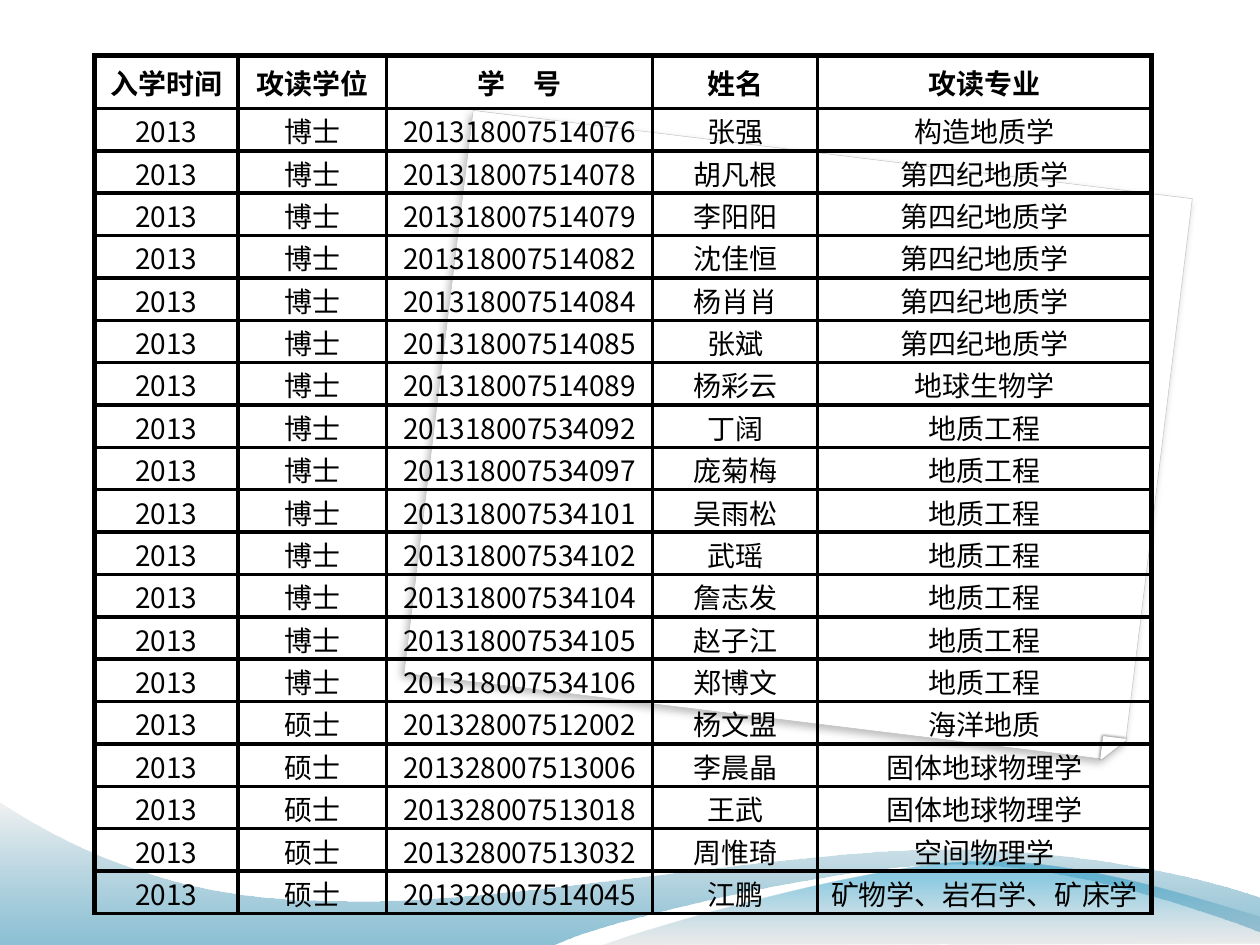
from lxml.etree import SubElement as Sub
from pptx import Presentation
from pptx.dml.color import RGBColor as RGB
from pptx.enum.shapes import MSO_SHAPE as Kind
from pptx.enum.text import MSO_ANCHOR as Anchor, PP_ALIGN as Align
from pptx.oxml.ns import qn
from pptx.util import Inches, Pt

FONT = "Noto Sans CJK SC"
HUES = {
    "ink": "000000", "paper": "FFFFFF", "edge": "C0C0C0", "deep": "0074A1",
    "mist": "E7E7E7", "grey": "BDBDBD", "sea": "008BBF",
}
HEAD = ["入学时间", "攻读学位", "学　号", "姓名", "攻读专业"]
YEAR = "2013"
PEOPLE = [
    ("博士", "201318007514076", "张强", "构造地质学"),
    ("博士", "201318007514078", "胡凡根", "第四纪地质学"),
    ("博士", "201318007514079", "李阳阳", "第四纪地质学"),
    ("博士", "201318007514082", "沈佳恒", "第四纪地质学"),
    ("博士", "201318007514084", "杨肖肖", "第四纪地质学"),
    ("博士", "201318007514085", "张斌", "第四纪地质学"),
    ("博士", "201318007514089", "杨彩云", "地球生物学"),
    ("博士", "201318007534092", "丁阔", "地质工程"),
    ("博士", "201318007534097", "庞菊梅", "地质工程"),
    ("博士", "201318007534101", "吴雨松", "地质工程"),
    ("博士", "201318007534102", "武瑶", "地质工程"),
    ("博士", "201318007534104", "詹志发", "地质工程"),
    ("博士", "201318007534105", "赵子江", "地质工程"),
    ("博士", "201318007534106", "郑博文", "地质工程"),
    ("硕士", "201328007512002", "杨文盟", "海洋地质"),
    ("硕士", "201328007513006", "李晨晶", "固体地球物理学"),
    ("硕士", "201328007513018", "王武", "固体地球物理学"),
    ("硕士", "201328007513032", "周惟琦", "空间物理学"),
    ("硕士", "201328007514045", "江鹏", "矿物学、岩石学、矿床学"),
]
COLS = [1.14, 1.18, 2.11, 1.31, 2.65]
LEFT, TOP, HIGH, HEAD_H = 0.75, 0.44, 6.77, 0.38

SHEETS = [
    (Kind.SNIP_ROUND_RECTANGLE, (3.46, 1.21, 5.75, 4.5), (0, 0.036),
     ("edge", 0.25), (25, 5, 3, 125)),
    (Kind.RIGHT_TRIANGLE, (8.75, 5.86, 0.17, 0.17), (),
     ("paper", 1), (47, 1.6, 0.5, 215)),
]
WAVES = [
    ([(0, 7.5), (4.4, 7.5), (4.76, 7.32, 6.64, 6.86, 7.58, 6.86),
      (8.53, 6.86, 9.58, 7.24, 10, 7.4), (10.01, 7.13),
      (9.83, 7.05, 8.7, 6.73, 7.46, 6.74),
      (6.22, 6.74, 3.82, 7.21, 2.57, 7.15),
      (1.29, 7.14, 0.46, 6.66, -0.01, 6.36)],
     [(0, "deep", 45), (1, "mist", 55)]),
    ([(4.79, 7.5), (5.09, 7.38, 6.82, 6.87, 7.69, 6.84),
      (8.56, 6.8, 9.61, 7.17, 10, 7.28), (10, 7.49)],
     [(0, "grey", 30), (0.8, "sea", 45)]),
]


def hue(name):
    return RGB.from_string(HUES[name])


def fade(clr, part):
    Sub(clr, qn("a:alpha")).set("val", str(part * 1000))


def trace(path, steps=16):
    dots = [path[0]]
    for seg in path[1:]:
        if len(seg) == 2:
            dots.append(seg)
            continue
        a, b, c, d = dots[-1], seg[:2], seg[2:4], seg[4:]
        for i in range(1, steps + 1):
            t = i / steps
            u = 1 - t
            dots.append(tuple(
                u**3 * a[k] + 3 * u * u * t * b[k] + 3 * u * t * t * c[k] + t**3 * d[k]
                for k in (0, 1)))
    return [(Inches(x), Inches(y)) for x, y in dots]


def add_sheet(shapes, kind, box, adj, line, shade):
    shape = shapes.add_shape(kind, *map(Inches, box))
    for i, val in enumerate(adj):
        shape.adjustments[i] = val
    shape.rotation = 7
    props = shape._element.spPr
    props.find(qn("a:xfrm")).set("flipV", "1")
    shape.fill.solid()
    shape.fill.fore_color.rgb = hue("paper")
    shape.line.color.rgb = hue(line[0])
    shape.line.width = Pt(line[1])
    shape.shadow.inherit = False
    part, blur, dist, turn = shade
    drop = Sub(props.find(qn("a:effectLst")), qn("a:outerShdw"))
    for key, val in (("blurRad", Pt(blur)), ("dist", Pt(dist)),
                     ("dir", turn * 60000), ("rotWithShape", 0)):
        drop.set(key, str(int(val)))
    clr = Sub(drop, qn("a:srgbClr"))
    clr.set("val", HUES["ink"])
    fade(clr, part)


def add_wave(shapes, path, stops):
    dots = trace(path)
    form = shapes.build_freeform(*dots[0])
    form.add_line_segments(dots[1:], close=True)
    shape = form.convert_to_shape()
    shape.shadow.inherit = False
    shape.line.fill.background()
    shape.fill.gradient()
    shape.fill.gradient_angle = 90
    for stop, (pos, name, part) in zip(shape.fill.gradient_stops, stops):
        stop.position = pos
        stop.color.rgb = hue(name)
    for clr, stop in zip(shape._element.spPr.iter(qn("a:srgbClr")), stops):
        fade(clr, stop[2])


def add_edge(cell, side, wide):
    line = Sub(cell._tc.get_or_add_tcPr(), qn("a:ln" + side))
    line.set("w", str(Pt(wide)))
    Sub(Sub(line, qn("a:solidFill")), qn("a:srgbClr")).set("val", HUES["ink"])


def fill_cell(cell, text, row, col):
    head = row == 0
    thick = {"L": col == 0, "R": col == len(COLS) - 1, "T": head, "B": False}
    for side, bold in thick.items():
        add_edge(cell, side, 3 if bold else 2.25)
    cell.fill.background()
    cell.vertical_anchor = Anchor.MIDDLE if head else Anchor.BOTTOM
    if not head:
        cell.margin_left = cell.margin_right = cell.margin_top = Inches(0.01)
        cell.margin_bottom = 0
    para = cell.text_frame.paragraphs[0]
    para.text = text
    para.alignment = Align.CENTER
    if head and col != 1:
        props = para._p.get_or_add_pPr()
        props.set("marL", str(Inches(0.3)))
        props.set("indent", str(Inches(-0.3)))
    run = para.runs[0]
    run.font.size = Pt(16)
    run.font.bold = head
    run.font.name = FONT
    run.font.color.rgb = hue("ink")
    Sub(run._r.get_or_add_rPr(), qn("a:ea")).set("typeface", FONT)


def add_roll(shapes):
    rows = [HEAD] + [(YEAR, *who) for who in PEOPLE]
    box = map(Inches, (LEFT, TOP, sum(COLS), HIGH))
    table = shapes.add_table(len(rows), len(COLS), *box).table
    table.first_row = table.horz_banding = False
    for col, wide in zip(table.columns, COLS):
        col.width = Inches(wide)
    step = (HIGH - HEAD_H) / len(PEOPLE)
    for r, row in enumerate(rows):
        table.rows[r].height = Inches(step if r else HEAD_H)
        for c, text in enumerate(row):
            fill_cell(table.cell(r, c), text, r, c)


def main():
    deck = Presentation()
    deck.slide_width, deck.slide_height = Inches(10), Inches(7.5)
    shapes = deck.slides.add_slide(deck.slide_layouts[6]).shapes
    for sheet in SHEETS:
        add_sheet(shapes, *sheet)
    for wave in WAVES:
        add_wave(shapes, *wave)
    add_roll(shapes)
    deck.save("out.pptx")


if __name__ == "__main__":
    main()
